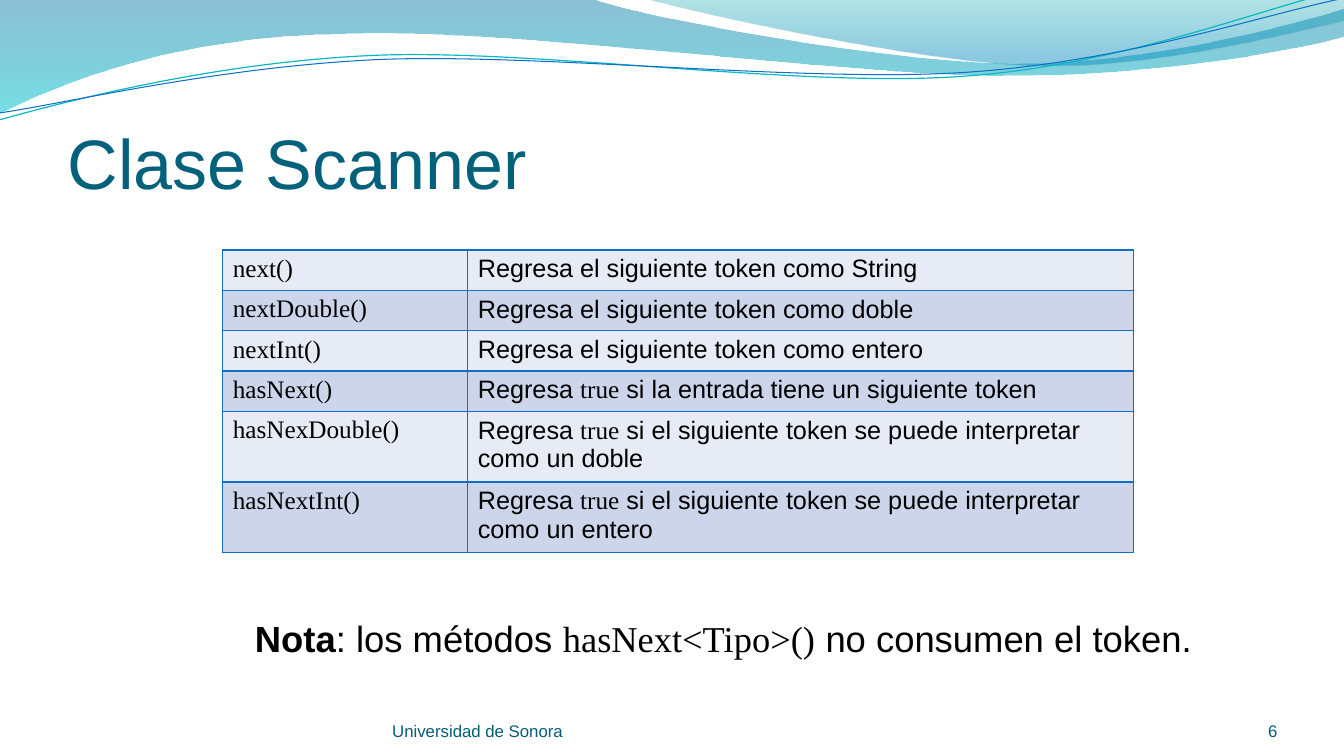
"""Build the slide on the Scanner class: wave header, method table and note."""
from lxml import etree
from pptx import Presentation
from pptx.dml.color import RGBColor
from pptx.enum.text import MSO_ANCHOR, PP_ALIGN
from pptx.oxml.ns import qn
from pptx.util import Inches, Pt

BOTTOM, TOP = MSO_ANCHOR.BOTTOM, MSO_ANCHOR.TOP
LEFT, RIGHT = PP_ALIGN.LEFT, PP_ALIGN.RIGHT
SANS, SERIF = "Arial", "Times New Roman"
BLACK, TITLE_TEAL, FOOTER_TEAL, BLUE = "000000", "04617B", "045D75", "0F6FC6"
BANDS = ("E7EBF5", "CCD5EA")

WIDE_WAVE = [
    (0, 0), (5.87, -0.01),
    (6.34, 0.17, 8.85, 0.63, 10.11, 0.63), (11.38, 0.63, 12.78, 0.26, 13.33, 0.09),
    (13.35, 0.36),
    (13.11, 0.44, 11.6, 0.76, 9.94, 0.75), (8.29, 0.75, 5.09, 0.28, 3.43, 0.34),
    (1.72, 0.36, 0.61, 0.83, -0.01, 1.13), (0, 0),
]
RIGHT_WAVE = [
    (6.39, -0.01),
    (6.79, 0.11, 9.09, 0.62, 10.25, 0.65), (11.41, 0.69, 12.82, 0.32, 13.33, 0.21),
    (13.33, 0), (6.39, -0.01),
]
TEAL_STRAND = [
    (-0.01, 1.19),
    (0.64, 1.01, 2.11, 0.62, 3.69, 0.55), (5.27, 0.48, 7.9, 0.87, 9.5, 0.76),
    (11.1, 0.66, 12.52, 0.08, 13.31, -0.1),
]
BLUE_STRAND = [
    (0, 1.12),
    (0.63, 1.03, 2.18, 0.66, 3.78, 0.59), (5.37, 0.53, 7.96, 0.82, 9.55, 0.72),
    (11.15, 0.62, 12.55, 0.14, 13.34, -0.02),
]

METHODS = [
    ("next()", "Regresa el siguiente token como String"),
    ("nextDouble()", "Regresa el siguiente token como doble"),
    ("nextInt()", "Regresa el siguiente token como entero"),
    ("hasNext()", "Regresa |true| si la entrada tiene un siguiente token"),
    ("hasNexDouble()",
     "Regresa |true| si el siguiente token se puede interpretar como un doble"),
    ("hasNextInt()",
     "Regresa |true| si el siguiente token se puede interpretar como un entero"),
]
COLUMN_WIDTHS = (2.43, 6.6)
ROW_HEIGHTS = (0.32, 0.32, 0.32, 0.32, 0.32, 0.49)
TABLE_HEIGHT = 3


def rgb(color):
    """Turn a hex string into a colour."""
    return RGBColor.from_string(color)


def add_curve(slide, steps, close):
    """Draw straight (2 numbers) and cubic (6 numbers) steps, in inches."""
    points = [(Inches(x), Inches(y))
              for step in steps for x, y in zip(step[::2], step[1::2])]
    builder = slide.shapes.build_freeform(*points[0])
    builder.add_line_segments(points[1:], close=close)
    curve = builder.convert_to_shape()
    curve.shadow.inherit = False
    segments = iter(list(curve._element.iter(qn("a:lnTo"))))
    for step in steps[1:]:
        segment = next(segments)
        if len(step) == 6:
            bezier = etree.Element(qn("a:cubicBezTo"))
            segment.addprevious(bezier)
            for control in (segment, next(segments), next(segments)):
                bezier.append(control[0])
                control.getparent().remove(control)
    return curve


def add_wave(slide, steps, stops):
    """Draw a wave with a downward gradient of (position, colour, opacity) stops."""
    wave = add_curve(slide, steps, True)
    wave.line.fill.background()
    wave.fill.gradient()
    wave.fill.gradient_angle = 270
    for stop, (position, color, _) in zip(wave.fill.gradient_stops, stops):
        stop.position = position
        stop.color.rgb = rgb(color)
    gradient = wave._element.spPr.find(qn("a:gradFill"))
    for tint, (_, _, opacity) in zip(gradient.iter(qn("a:srgbClr")), stops):
        etree.SubElement(tint, qn("a:alpha"), val=str(opacity * 1000))


def add_strand(slide, steps, color, width):
    """Draw a thin open curve."""
    strand = add_curve(slide, steps, False)
    strand.fill.background()
    strand.line.color.rgb = rgb(color)
    strand.line.width = Pt(width)


def write_runs(paragraph, runs, size, color):
    """Add (text, font, bold) runs to a paragraph."""
    for text, font, bold in runs:
        run = paragraph.add_run()
        run.text = text
        run.font.name = font
        run.font.size = Pt(size)
        run.font.bold = bold
        run.font.color.rgb = rgb(color)


def add_text(slide, box, runs, size, color, anchor=BOTTOM, align=LEFT,
             insets=(0, 0, 0, 0), wrap=True):
    """Add a one-paragraph text box."""
    frame = slide.shapes.add_textbox(*map(Inches, box)).text_frame
    frame.word_wrap = wrap
    frame.vertical_anchor = anchor
    (frame.margin_left, frame.margin_top,
     frame.margin_right, frame.margin_bottom) = map(Inches, insets)
    frame.paragraphs[0].alignment = align
    write_runs(frame.paragraphs[0], runs, size, color)


def add_borders(cell, color, width):
    """Give all four sides of a cell a solid line."""
    properties = cell._tc.get_or_add_tcPr()
    for side in ("lnL", "lnR", "lnT", "lnB"):
        line = etree.SubElement(properties, qn(f"a:{side}"), w=str(Pt(width)))
        fill = etree.SubElement(line, qn("a:solidFill"))
        etree.SubElement(fill, qn("a:srgbClr"), val=color)


def fill_cell(cell, runs, band):
    """Write a table cell with its border and band colour."""
    add_borders(cell, BLUE, 1)
    cell.fill.solid()
    cell.fill.fore_color.rgb = rgb(band)
    write_runs(cell.text_frame.paragraphs[0], runs, 18, BLACK)


def add_method_table(slide):
    """Add the table of methods, with code words in the serif font."""
    holder = slide.shapes.add_table(
        len(METHODS), len(COLUMN_WIDTHS), Inches(2.21), Inches(2.48),
        Inches(sum(COLUMN_WIDTHS)), Inches(TABLE_HEIGHT))
    table = holder.table
    table.first_row = False
    table.horz_banding = False
    for column, width in zip(table.columns, COLUMN_WIDTHS):
        column.width = Inches(width)
    for i, (method, description) in enumerate(METHODS):
        table.rows[i].height = Inches(ROW_HEIGHTS[i])
        band = BANDS[i % 2]
        words = [(part, (SANS, SERIF)[j % 2], False)
                 for j, part in enumerate(description.split("|"))]
        fill_cell(table.cell(i, 0), [(method, SERIF, False)], band)
        fill_cell(table.cell(i, 1), words, band)
    holder.height = Inches(TABLE_HEIGHT)


def main():
    """Build and save the slide."""
    deck = Presentation()
    deck.slide_width, deck.slide_height = Inches(13.33), Inches(7.5)
    slide = deck.slides.add_slide(deck.slide_layouts[6])

    add_wave(slide, WIDE_WAVE, [(0, "0074A1", 45), (1, "00C6CF", 55)])
    add_wave(slide, RIGHT_WAVE, [(0, "00A1A9", 30), (0.8, "008BBF", 45)])
    add_strand(slide, TEAL_STRAND, "0AB8BF", 0.85)
    add_strand(slide, BLUE_STRAND, BLUE, 0.75)

    add_text(slide, (0.67, 0.77, 12, 1.25), [("Clase Scanner", SANS, False)],
             50, TITLE_TEAL, insets=(0, 0.05, 0, 0))
    add_method_table(slide)
    add_text(slide, (3.89, 6.95, 4.89, 0.4), [("Universidad de Sonora", SANS, False)],
             12, FOOTER_TEAL)
    add_text(slide, (11.56, 6.95, 1.11, 0.4), [("6", SANS, False)],
             12, FOOTER_TEAL, align=RIGHT)
    note = [("Nota", SANS, True), (": los métodos ", SANS, False),
            ("hasNext<Tipo>()", SERIF, False), (" no consumen el token.", SANS, False)]
    add_text(slide, (2.43, 6.06, 9.77, 0.54), note, 26, BLACK, anchor=TOP,
             insets=(0.1, 0.05, 0.1, 0.05), wrap=False)

    deck.save("out.pptx")


if __name__ == "__main__":
    main()
